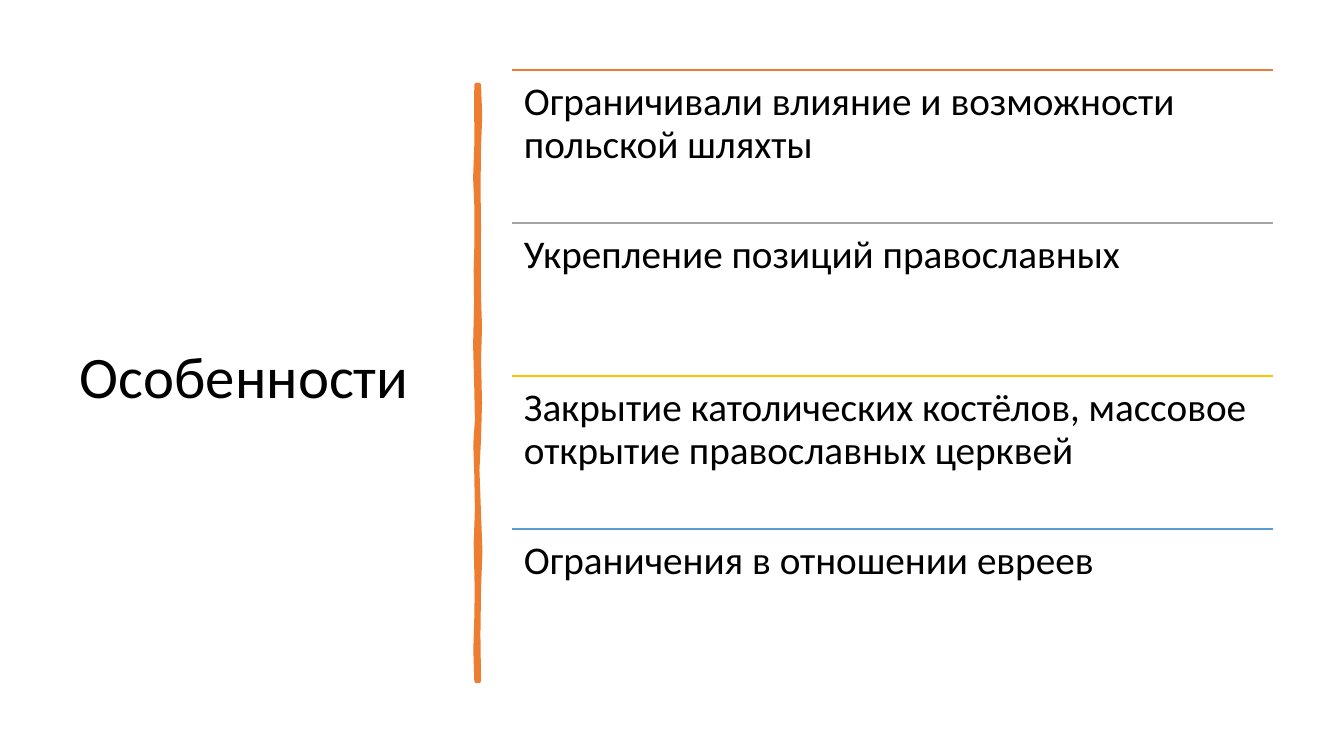
from pptx import Presentation
from pptx.dml.color import RGBColor
from pptx.enum.shapes import MSO_CONNECTOR
from pptx.enum.text import MSO_ANCHOR
from pptx.oxml.ns import qn
from pptx.util import Pt
from lxml import etree

LINE = MSO_CONNECTOR.STRAIGHT
TOP, MID = MSO_ANCHOR.TOP, MSO_ANCHOR.MIDDLE
PX = 914400 / 100.8
COLORS = {"ink": "000000", "orange": "ED7D31", "gray": "A5A5A5",
          "gold": "FFC000", "blue": "5B9BD5"}
ROWS = [
    ("orange", "Ограничивали влияние и возможности польской шляхты"),
    ("gray", "Укрепление позиций православных"),
    ("gold", "Закрытие католических костёлов, массовое открытие православных церквей"),
    ("blue", "Ограничения в отношении евреев"),
]
# Outline of the hand-drawn bar, in tenths of a px
RIGHT = [(4788, 850), (4800, 1160), (4788, 1470), (4783, 1870), (4788, 2280),
         (4785, 2620), (4788, 2960), (4798, 3280), (4788, 3590), (4798, 4030),
         (4788, 4390), (4772, 4700), (4788, 5140), (4802, 5510), (4788, 5890),
         (4782, 6350), (4788, 6810)]
LEFT = [(4766, 6810), (4756, 6500), (4766, 6180), (4770, 5900), (4760, 5430),
        (4772, 5100), (4766, 4750), (4756, 4440), (4772, 4200), (4766, 3890),
        (4754, 3450), (4764, 3020), (4760, 2700), (4768, 2400), (4768, 2100),
        (4754, 1780), (4768, 1400), (4764, 1100), (4766, 850)]


def emu(n):
    return round(n * PX)


def tint(name):
    return RGBColor.from_string(COLORS[name])


class Page:
    def __init__(self, deck, font="Calibri"):
        self.font = font
        self.shapes = deck.slides.add_slide(deck.slide_layouts[6]).shapes

    def text(self, words, x, y, w, h, size=28, color="ink", anchor=TOP, pad=12):
        box = self.shapes.add_textbox(emu(x), emu(y), emu(w), emu(h))
        frame = box.text_frame
        frame.word_wrap = True
        frame.vertical_anchor = anchor
        frame.margin_left = frame.margin_right = emu(pad)
        frame.margin_top = frame.margin_bottom = emu(pad)
        para = frame.paragraphs[0]
        para.line_spacing = 0.9
        run = para.add_run()
        run.text = words
        run.font.name = self.font
        run.font.size = Pt(size)
        run.font.color.rgb = tint(color)

    def rule(self, x, y, w, color):
        line = self.shapes.add_connector(LINE, emu(x), emu(y), emu(x + w), emu(y))
        line.line.color.rgb = tint(color)
        line.line.width = Pt(1)
        etree.SubElement(line._element.spPr, qn("a:effectLst"))

    def bar(self, points, color):
        pen = self.shapes.build_freeform(*points[0], scale=PX / 10)
        pen.add_line_segments(points[1:], close=True)
        shape = pen.convert_to_shape()
        shape.shadow.inherit = False
        shape.fill.solid()
        shape.fill.fore_color.rgb = tint(color)
        shape.line.color.rgb = tint(color)
        shape.line.width = Pt(3.25)
        etree.SubElement(shape.line._get_or_add_ln(), qn("a:round"))


def main():
    deck = Presentation()
    deck.slide_width, deck.slide_height = emu(1344), emu(756)
    page = Page(deck)
    page.text("Особенности", 70, 71, 377, 616, size=42, anchor=MID, pad=10)
    page.bar(RIGHT + LEFT, "orange")
    left, top, wide, step = 512, 70, 761, 153
    for i, (color, words) in enumerate(ROWS):
        y = top + i * step
        page.rule(left, y, wide, color)
        page.text(words, left, y, wide, step)
    deck.save("out.pptx")


if __name__ == "__main__":
    main()
